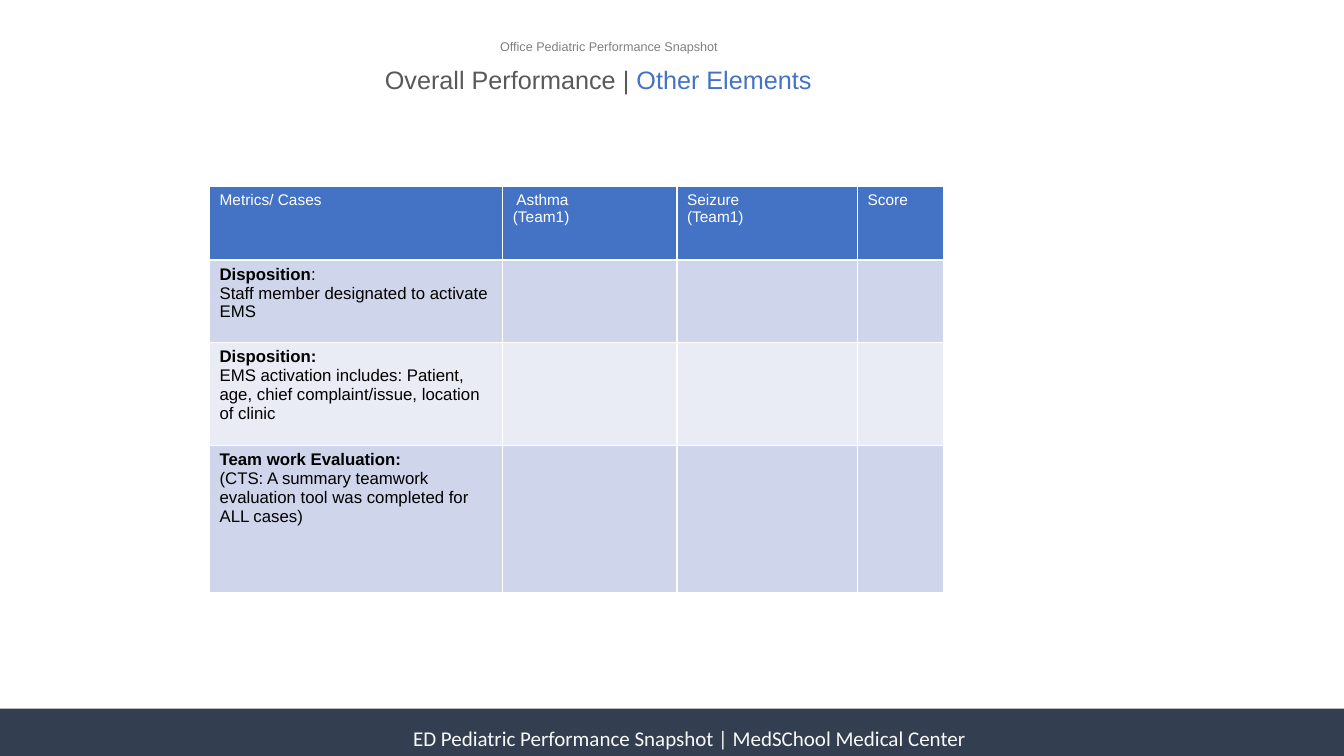
"""Build the pediatric performance slide with its table of other elements."""
from dataclasses import dataclass

from lxml import etree
from pptx import Presentation
from pptx.dml.color import RGBColor
from pptx.enum import shapes, text
from pptx.oxml import ns
from pptx.slide import Slide
from pptx.table import _Cell
from pptx.text.text import TextFrame
from pptx.util import Cm, Pt

WHITE = RGBColor(0xFF, 0xFF, 0xFF)
BLACK = RGBColor(0, 0, 0)
NAVY = RGBColor(0x33, 0x3F, 0x50)
OFF_WHITE = RGBColor(0xF9, 0xF9, 0xF9)
DARK_GRAY = RGBColor(0x59, 0x59, 0x59)
GRAY = RGBColor(0x80, 0x80, 0x80)
BLUE = RGBColor(0x44, 0x72, 0xC4)
BANDS = (RGBColor(0xCF, 0xD5, 0xEA), RGBColor(0xE9, 0xEB, 0xF5))


@dataclass(frozen=True)
class Run:
    """A stretch of text in one format."""
    words: str
    color: RGBColor = BLACK
    bold: bool = False


Paragraphs = list[list[Run]]


@dataclass(frozen=True)
class Caption:
    """A line of text placed on the slide, in centimetres."""
    left: float
    top: float
    width: float
    height: float
    runs: list[Run]
    size: float
    font: str = "Arial"
    align: text.PP_ALIGN = text.PP_ALIGN.LEFT
    wrap: bool = True


@dataclass(frozen=True)
class Metric:
    """A table row: its heading, what it measures and its height."""
    heading: str
    detail: str
    height: float
    mark: str = ""


CAPTIONS = [
    Caption(10.16, 18.16, 16.08, 0.89,
            [Run("ED Pediatric Performance Snapshot | MedSChool Medical Center", OFF_WHITE)],
            size=15, font="Calibri", wrap=False),
    Caption(9.45, 1.5, 14.78, 1.02,
            [Run("Overall Performance | ", DARK_GRAY), Run("Other Elements", BLUE)], size=18),
    Caption(9.78, 0.86, 11.13, 0.64,
            [Run("Office Pediatric Performance Snapshot", GRAY)],
            size=9, align=text.PP_ALIGN.CENTER),
]
HEADINGS = [["Metrics/ Cases"], [" Asthma", "(Team1)"], ["Seizure", "(Team1)"], ["Score"]]
COLUMN_WIDTHS = [7.39, 4.39, 4.55, 2.18]
HEADER_HEIGHT = 1.85
METRICS = [
    Metric("Disposition", "Staff member designated to activate EMS", 2.08, mark=":"),
    Metric("Disposition:", "EMS activation includes: Patient, age, chief complaint/issue, "
           "location of clinic", 2.59),
    Metric("Team work Evaluation:", "(CTS: A summary teamwork evaluation tool was completed "
           "for ALL cases)", 3.71),
]


def write(frame: TextFrame, paragraphs: Paragraphs, *, size: float, font: str = "Arial",
          align: text.PP_ALIGN = text.PP_ALIGN.LEFT) -> None:
    """Fill a text frame with formatted paragraphs."""
    for index, runs in enumerate(paragraphs):
        paragraph = frame.add_paragraph() if index else frame.paragraphs[0]
        paragraph.alignment = align
        for part in runs:
            run = paragraph.add_run()
            run.text = part.words
            run.font.size = Pt(size)
            run.font.name = font
            run.font.bold = part.bold
            run.font.color.rgb = part.color


def add_caption(slide: Slide, caption: Caption) -> None:
    """Place one caption."""
    box = slide.shapes.add_textbox(Cm(caption.left), Cm(caption.top),
                                   Cm(caption.width), Cm(caption.height))
    box.text_frame.word_wrap = caption.wrap
    write(box.text_frame, [caption.runs], size=caption.size, font=caption.font,
          align=caption.align)


def style_cell(cell: _Cell, color: RGBColor) -> None:
    """Give a cell white borders and a fill."""
    properties = cell._tc.get_or_add_tcPr()
    for side in "LRTB":
        border = etree.SubElement(properties, ns.qn(f"a:ln{side}"), w=str(Pt(1)))
        fill = etree.SubElement(border, ns.qn("a:solidFill"))
        etree.SubElement(fill, ns.qn("a:srgbClr"), val=str(WHITE))
    cell.fill.solid()
    cell.fill.fore_color.rgb = color


def add_metrics_table(slide: Slide) -> None:
    """Draw the table of metrics against cases."""
    heights = [HEADER_HEIGHT] + [metric.height for metric in METRICS]
    table = slide.shapes.add_table(len(heights), len(HEADINGS), Cm(5.28), Cm(4.7),
                                   Cm(sum(COLUMN_WIDTHS)), Cm(sum(heights))).table
    for column, width in zip(table.columns, COLUMN_WIDTHS):
        column.width = Cm(width)
    for index, (row, height) in enumerate(zip(table.rows, heights)):
        row.height = Cm(height)
        for cell in row.cells:
            style_cell(cell, BANDS[(index - 1) % 2] if index else BLUE)
    for column, lines in enumerate(HEADINGS):
        write(table.cell(0, column).text_frame, [[Run(line, WHITE)] for line in lines], size=11)
    for row, metric in enumerate(METRICS, start=1):
        heading = [Run(metric.heading, bold=True)]
        if metric.mark:
            heading.append(Run(metric.mark))
        write(table.cell(row, 0).text_frame, [heading, [Run(metric.detail)]], size=12)


def main() -> None:
    """Assemble and save the slide."""
    deck = Presentation()
    deck.slide_width, deck.slide_height = Cm(33.87), Cm(19.05)
    slide = deck.slides.add_slide(deck.slide_layouts[6])
    footer = slide.shapes.add_shape(shapes.MSO_SHAPE.RECTANGLE, 0, Cm(17.86),
                                    deck.slide_width, Cm(1.19))
    footer.shadow.inherit = False
    footer.fill.solid()
    footer.fill.fore_color.rgb = NAVY
    footer.line.fill.background()
    for caption in CAPTIONS:
        add_caption(slide, caption)
    add_metrics_table(slide)
    deck.save("out.pptx")


if __name__ == "__main__":
    main()
